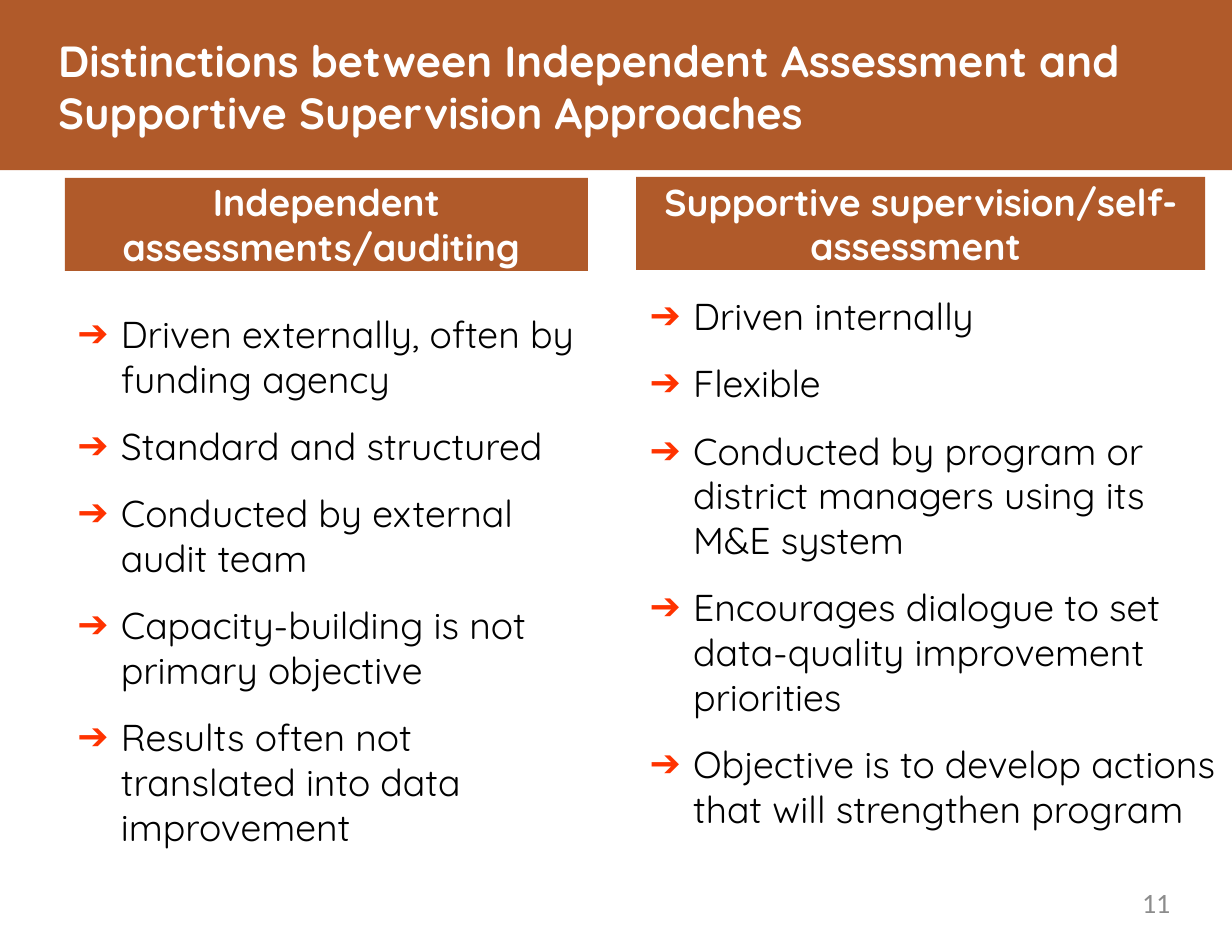
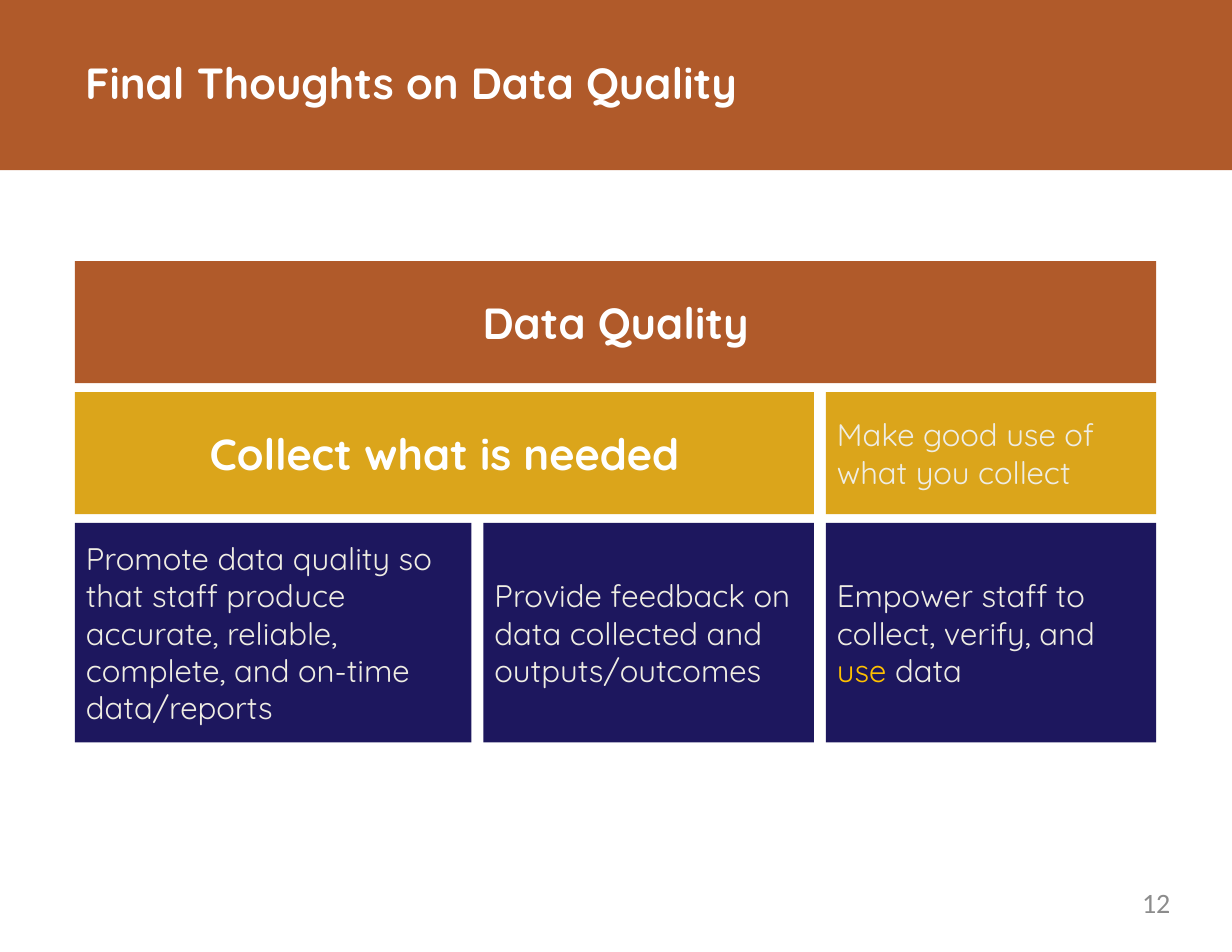
from itertools import accumulate
from lxml import etree
from pptx import Presentation
from pptx.dml.color import RGBColor
from pptx.enum.shapes import MSO_SHAPE
from pptx.enum.text import MSO_ANCHOR, MSO_AUTO_SIZE, PP_ALIGN
from pptx.oxml.ns import qn
from pptx.util import Pt

RECT = MSO_SHAPE.RECTANGLE
TOP, MIDDLE = MSO_ANCHOR.TOP, MSO_ANCHOR.MIDDLE
LEFT, CENTER, RIGHT = PP_ALIGN.LEFT, PP_ALIGN.CENTER, PP_ALIGN.RIGHT
FIXED = MSO_AUTO_SIZE.NONE

RUST, GOLD, NAVY = "B05A2A", "DBA51B", "1D175E"
WHITE, BLACK, CREAM = "FFFFFF", "000000", "EFEDE3"
AMBER, ARROW, GREY = "FFC000", "FF3300", "8C8C8C"
FONT, PAGE_FONT = "Quicksand", "Calibri"
WIDE, HIGH, BAND = 792, 612, 109.4
INSET = (7.9, 4.3)

# Each column: heading, heading box, list box, list items
COLUMNS = [
    ("Independent assessments/auditing ",
     (41.8, 114.4, 336.2, 59.8), (41.8, 195.8, 336.2, 388.8),
     ["Driven externally, often by funding agency",
      "Standard and structured",
      "Conducted by external audit team",
      "Capacity-building is not primary objective",
      "Results often not translated into data improvement"]),
    ("Supportive supervision/self-assessment ",
     (409, 113.8, 365.8, 59.8), (409.7, 184.3, 382.3, 401),
     ["Driven internally",
      "Flexible",
      "Conducted by program or district managers using its M&E system",
      "Encourages dialogue to set data-quality improvement priorities",
      "Objective is to develop actions that will strengthen program"]),
]

# Each block: row, first column, columns spanned, fill, is heading, runs
BLOCKS = [
    (0, 0, 3, RUST, True, [("Data Quality", WHITE)]),
    (1, 0, 2, GOLD, True, [("Collect what is needed", WHITE)]),
    (1, 2, 1, GOLD, False, [("Make good use of what you collect", CREAM)]),
    (2, 0, 1, NAVY, False, [("Promote data quality so that staff produce accurate, "
                             "reliable, complete, and on-time data/reports", CREAM)]),
    (2, 1, 1, NAVY, False, [("Provide feedback on data collected and "
                             "outputs/outcomes", CREAM)]),
    (2, 2, 1, NAVY, False, [("Empower staff to collect, verify, and ", CREAM),
                            ("use ", AMBER), ("data", CREAM)]),
]
GRID_X, GRID_Y = 48.2, 167.8
COLS, COL_GAP = [254.9, 212.4, 212.4], 7.7
ROWS, ROW_GAP = [78.5, 78.5, 141.1], 5.7


def color(code):
    return RGBColor.from_string(code)


def place(shape, box):
    shape.left, shape.top, shape.width, shape.height = map(Pt, box)


def frame(shape, anchor=TOP, inset=(0, 0)):
    text = shape.text_frame
    text.word_wrap = True
    text.auto_size = FIXED
    text.vertical_anchor = anchor
    text.margin_left = text.margin_right = Pt(inset[0])
    text.margin_top = text.margin_bottom = Pt(inset[1])
    return text


def write(para, runs, size, bold=False, align=LEFT, font=FONT):
    """Add (words, colour) runs to a paragraph."""
    para.alignment = align
    for words, tint in runs:
        run = para.add_run()
        run.text = words
        run.font.name = font
        run.font.size = Pt(size)
        run.font.bold = bold
        run.font.color.rgb = color(tint)


def bullet(para):
    """Give a paragraph a hanging arrow bullet."""
    para.space_before, para.space_after = Pt(4.8), Pt(9.6)
    props = para._p.get_or_add_pPr()
    props.set("marL", str(Pt(28)))
    props.set("indent", str(-Pt(28)))
    tint = etree.SubElement(props, qn("a:buClr"))
    etree.SubElement(tint, qn("a:srgbClr"), val=ARROW)
    etree.SubElement(props, qn("a:buFont"), typeface="Arial")
    etree.SubElement(props, qn("a:buChar"), char="➔")


def panel(slide, box, fill):
    shape = slide.shapes.add_shape(RECT, *map(Pt, box))
    shape.shadow.inherit = False
    shape.fill.solid()
    shape.fill.fore_color.rgb = color(fill)
    shape.line.fill.background()
    return shape


def start(deck, layout, title, box):
    """Add a slide with its title."""
    slide = deck.slides.add_slide(deck.slide_layouts[layout])
    head = slide.shapes.title
    place(head, box)
    write(frame(head).paragraphs[0], [(title, WHITE)], 28, True)
    return slide


def number(slide, page):
    box = slide.shapes.add_textbox(*map(Pt, (570, 569.5, 182.4, 30)))
    write(frame(box).paragraphs[0], [(str(page), GREY)], 18,
          align=RIGHT, font=PAGE_FONT)


def compare(deck):
    slide = start(deck, 3, "Distinctions between Independent Assessment and "
                  "Supportive Supervision Approaches", (37.4, 21.6, 734, 68))
    for spot, (name, top, area, items) in enumerate(COLUMNS, 1):
        text = frame(panel(slide, top, RUST), MIDDLE, INSET)
        write(text.paragraphs[0], [(name, WHITE)], 24, True, CENTER)
        body = slide.placeholders[spot]
        place(body, area)
        text = frame(body, inset=INSET)
        for i, item in enumerate(items):
            para = text.add_paragraph() if i else text.paragraphs[0]
            write(para, [(item, BLACK)], 24)
            bullet(para)
    return slide


def starts(first, sizes, gap):
    return list(accumulate((size + gap for size in sizes), initial=first))


def conclude(deck):
    slide = start(deck, 5, "Final Thoughts on Data Quality", (54.7, 36, 625.7, 34))
    lefts = starts(GRID_X, COLS, COL_GAP)
    tops = starts(GRID_Y, ROWS, ROW_GAP)
    for row, col, span, fill, head, runs in BLOCKS:
        width = lefts[col + span] - COL_GAP - lefts[col]
        shape = panel(slide, (lefts[col], tops[row], width, ROWS[row]), fill)
        text = frame(shape, MIDDLE, (7.2, 3.6))
        write(text.paragraphs[0], runs, 28 if head else 20, head,
              CENTER if head else LEFT)
    return slide


def main():
    deck = Presentation()
    deck.slide_width, deck.slide_height = Pt(WIDE), Pt(HIGH)
    slides = [compare(deck), conclude(deck)]
    for page, slide in enumerate(slides, 11):
        number(slide, page)
    # The title band belongs to the master, behind everything else
    band = panel(slides[0], (0, 0, WIDE, BAND), RUST)
    deck.slide_master.shapes.element.insert(2, band.element)
    deck.save("out.pptx")


if __name__ == "__main__":
    main()
